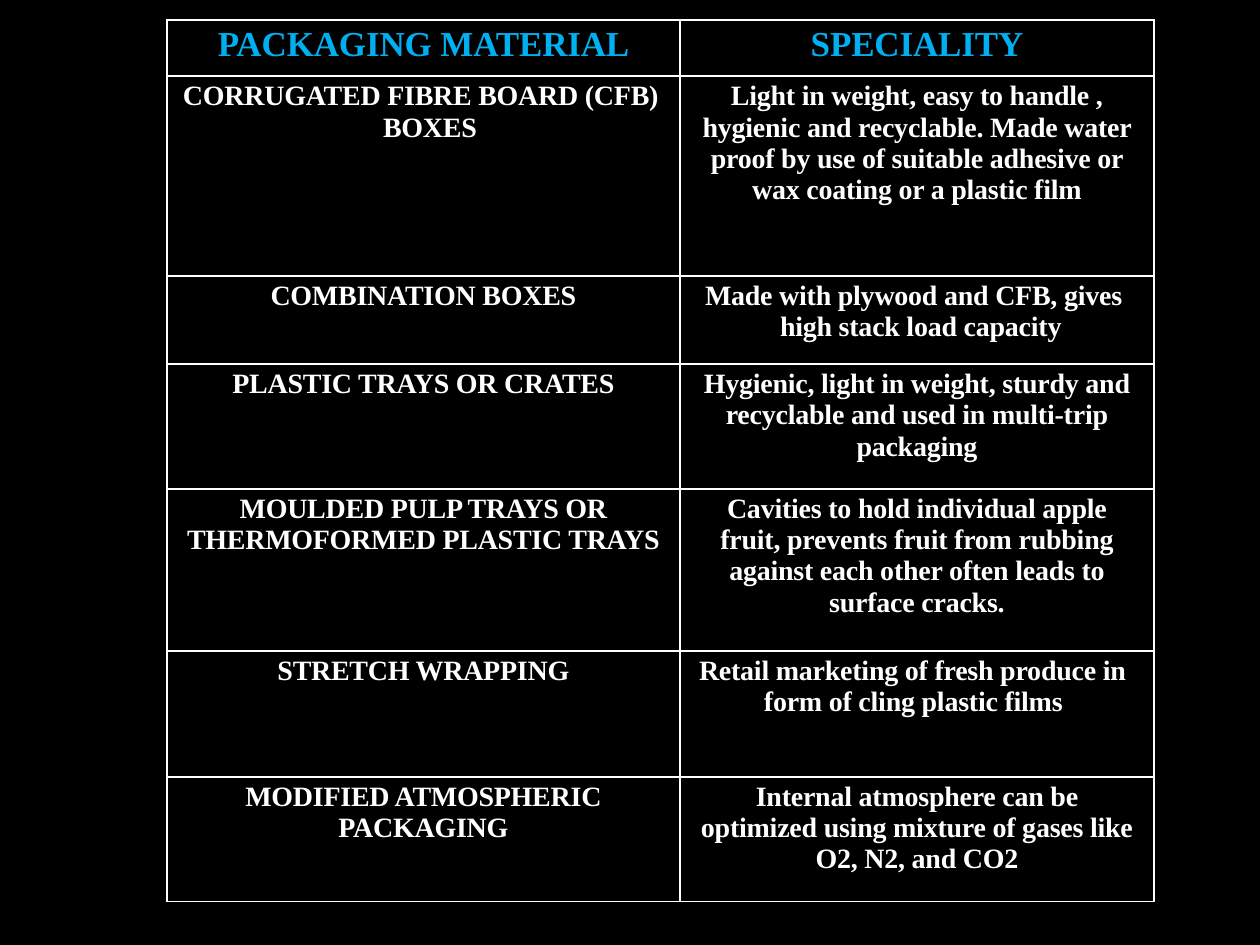
from dataclasses import dataclass

from lxml import etree
from pptx import Presentation
from pptx.dml.color import RGBColor
from pptx.enum.text import MSO_ANCHOR, PP_ALIGN
from pptx.oxml.ns import qn
from pptx.util import Pt

PX = 914400 / 126
LEFT, CENTER = PP_ALIGN.LEFT, PP_ALIGN.CENTER
TOP = MSO_ANCHOR.TOP
EDGES = ("lnL", "lnR", "lnT", "lnB")


@dataclass(frozen=True)
class Theme:
    font: str = "Times New Roman"
    ground: str = "000000"
    heading: str = "00AFEF"
    body: str = "FFFFFF"
    border: str = "FFFFFF"
    heading_size: int = 20
    body_size: int = 16
    border_width: int = 1
    space_before: int = 3
    tracking: float = -0.1


def px(length):
    return round(length * PX)


def write_text(frame, text, *, theme, size, color, align=CENTER, margin=0, hang=0):
    """Write one paragraph per line; centred margins apply to both sides."""
    for index, line in enumerate(text.split("\n")):
        para = frame.add_paragraph() if index else frame.paragraphs[0]
        para.alignment = align
        para.space_before = Pt(0 if index else theme.space_before)
        properties = para._p.get_or_add_pPr()
        properties.set("marL", str(px(margin)))
        properties.set("marR", str(px(margin if align == CENTER else 0)))
        properties.set("indent", str(px(-hang)))
        span = para.add_run()
        span.text = line
        span.font.name = theme.font
        span.font.size = Pt(size)
        span.font.bold = True
        span.font.color.rgb = RGBColor.from_string(color)
        span._r.get_or_add_rPr().set("spc", str(round(theme.tracking * 100)))


class SlideBuilder:
    def __init__(self, deck, theme):
        self.theme = theme
        self.page = deck.slides.add_slide(deck.slide_layouts[6])

    def background(self):
        fill = self.page.background.fill
        fill.solid()
        fill.fore_color.rgb = RGBColor.from_string(self.theme.ground)

    def borders(self, cell):
        properties = cell._tc.get_or_add_tcPr()
        for edge in EDGES:
            line = etree.SubElement(properties, qn(f"a:{edge}"),
                                    w=str(Pt(self.theme.border_width)))
            fill = etree.SubElement(line, qn("a:solidFill"))
            etree.SubElement(fill, qn("a:srgbClr"), val=self.theme.border)

    def cell(self, cell, text, **style):
        self.borders(cell)
        cell.fill.solid()
        cell.fill.fore_color.rgb = RGBColor.from_string(self.theme.ground)
        cell.margin_left = cell.margin_right = cell.margin_bottom = 0
        cell.margin_top = px(5)
        cell.vertical_anchor = TOP
        write_text(cell.text_frame, text, theme=self.theme, **style)

    def table(self, left, top, widths, heights, rows):
        table = self.page.shapes.add_table(
            len(heights), len(widths), px(left), px(top),
            px(sum(widths)), px(sum(heights))).table
        table.horz_banding = False
        for column, width in zip(table.columns, widths):
            column.width = px(width)
        for row, height in zip(table.rows, heights):
            row.height = px(height)
        heading = dict(size=self.theme.heading_size, color=self.theme.heading)
        body = dict(size=self.theme.body_size, color=self.theme.body)
        for row_index, row in enumerate(rows):
            base = body if row_index else heading
            for column_index, (text, layout) in enumerate(row):
                self.cell(table.cell(row_index, column_index), text, **base, **layout)


def centered(margin=0):
    return dict(margin=margin)


def hanging(margin, hang):
    return dict(align=LEFT, margin=margin, hang=hang)


ROWS = [
    (("PACKAGING MATERIAL", centered()), ("SPECIALITY", centered())),
    (("CORRUGATED FIBRE BOARD (CFB) BOXES", hanging(216, 200)),
     ("Light in weight, easy to handle , hygienic and recyclable. Made water "
      "proof by use of suitable adhesive or wax coating or a plastic film", centered(18))),
    (("COMBINATION BOXES", centered()),
     ("Made with plywood and CFB, gives high stack load capacity", hanging(100, 75))),
    (("PLASTIC TRAYS OR CRATES", centered()),
     ("Hygienic, light in weight, sturdy and recyclable and used in multi-trip "
      "packaging", centered(18))),
    (("MOULDED PULP TRAYS OR\nTHERMOFORMED PLASTIC TRAYS", centered()),
     ("Cavities to hold individual apple fruit, prevents fruit from rubbing "
      "against each other often leads to surface cracks.", centered(36))),
    (("STRETCH WRAPPING", centered()),
     ("Retail marketing of fresh produce in form of cling plastic films",
      hanging(84, 65))),
    (("MODIFIED ATMOSPHERIC\nPACKAGING", centered()),
     ("Internal atmosphere can be optimized using mixture of gases like "
      "O2, N2, and CO2", centered(16))),
]


def main():
    deck = Presentation()
    deck.slide_width, deck.slide_height = px(1260), px(945)
    builder = SlideBuilder(deck, Theme())

    # Black ground
    builder.background()

    # Materials and their specialities
    builder.table(167, 20, widths=(513, 474),
                  heights=(56, 200, 88, 125, 162, 126, 125), rows=ROWS)

    deck.save("out.pptx")


if __name__ == "__main__":
    main()
